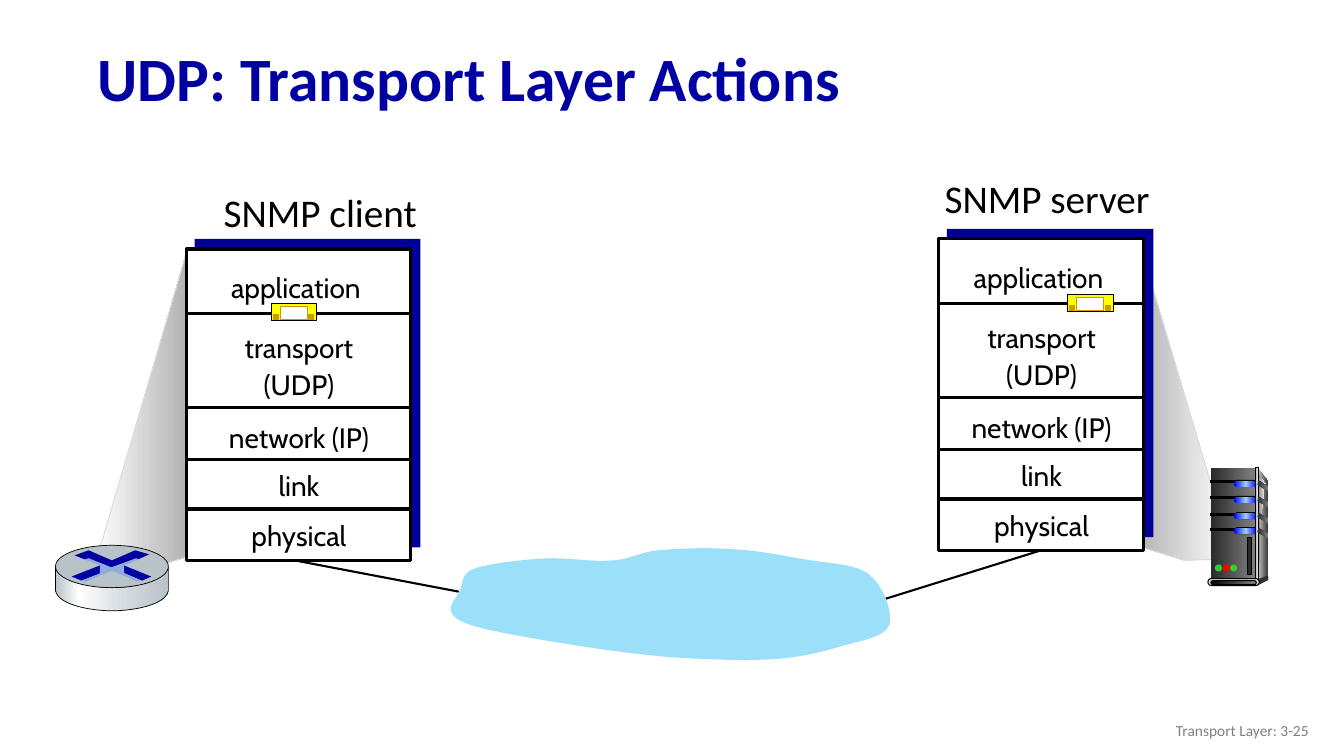
from lxml.etree import SubElement
from pptx import Presentation
from pptx.dml.color import RGBColor
from pptx.enum.shapes import MSO_CONNECTOR, MSO_SHAPE
from pptx.enum.text import MSO_ANCHOR, PP_ALIGN
from pptx.oxml.ns import qn
from pptx.util import Inches, Pt

RECT, ROUND, OVAL = MSO_SHAPE.RECTANGLE, MSO_SHAPE.ROUNDED_RECTANGLE, MSO_SHAPE.OVAL
BLACK, WHITE, NAVY, AMBER = "000000", "FFFFFF", "000099", "CC9900"
BLUE, GREY, SILVER = "0000A3", "808080", "B8C2C9"
DARK_METAL = [(0, "292929"), (100, GREY)]
BLUE_LIGHT = [(0, "0000FF"), (50, "99CCFF"), (100, "0000FF")]
THIN = (BLACK, 0.75)


def color(hex_code):
    return RGBColor.from_string(hex_code)


class Diagram:
    title_font = "Calibri"
    layer_font = "Cabin"

    def __init__(self, slide):
        self.slide = slide
        self.shapes = slide.shapes

    def open_group(self):
        self.shapes = self.slide.shapes.add_group_shape().shapes

    def close_group(self):
        self.shapes = self.slide.shapes

    def paint(self, shape, fill, line=None):
        shape.shadow.inherit = False
        if isinstance(fill, str):
            shape.fill.solid()
            shape.fill.fore_color.rgb = color(fill)
        else:
            shape.fill.gradient()
            shape.fill.gradient_angle = 0
            stops = shape._element.spPr.find(".//" + qn("a:gsLst"))
            for stop in list(stops):
                stops.remove(stop)
            for position, tone in fill:
                stop = SubElement(stops, qn("a:gs"), pos=str(position * 1000))
                SubElement(stop, qn("a:srgbClr"), val=tone)
        if line:
            shape.line.color.rgb = color(line[0])
            shape.line.width = Pt(line[1])
        else:
            shape.line.fill.background()
        return shape

    def shape(self, kind, left, top, width, height, fill, line=None):
        shape = self.shapes.add_shape(kind, Inches(left), Inches(top), Inches(width), Inches(height))
        if kind == ROUND:
            shape.adjustments[0] = 0.5
        return self.paint(shape, fill, line)

    def outline(self, parts, fill, line=None):
        """Closed outline; a part is an (x, y) corner or a six-number cubic curve."""
        points = [(Inches(x), Inches(y)) for part in parts for x, y in zip(part[::2], part[1::2])]
        builder = self.shapes.build_freeform(*points[0])
        builder.add_line_segments(points[1:], close=True)
        shape = builder.convert_to_shape()
        # Redraw the segments with true curves inside the same frame
        track = shape._element.spPr.find(".//" + qn("a:pathLst"))[0]
        for segment in list(track):
            track.remove(segment)
        for index, part in enumerate(parts):
            tag = "a:moveTo" if index == 0 else "a:lnTo" if len(part) == 2 else "a:cubicBezTo"
            segment = SubElement(track, qn(tag))
            for x, y in zip(part[::2], part[1::2]):
                SubElement(segment, qn("a:pt"), x=str(Inches(x) - shape.left), y=str(Inches(y) - shape.top))
        SubElement(track, qn("a:close"))
        return self.paint(shape, fill, line)

    def line(self, x1, y1, x2, y2, width):
        line = self.shapes.add_connector(
            MSO_CONNECTOR.STRAIGHT, Inches(x1), Inches(y1), Inches(x2), Inches(y2))
        line.line.color.rgb = color(BLACK)
        line.line.width = Pt(width)
        SubElement(line._element.spPr, qn("a:effectLst"))
        return line

    def text(self, left, top, width, height, lines, size, tone=BLACK, font=title_font, bold=False,
             align=PP_ALIGN.LEFT, spacing=1.0, anchor=MSO_ANCHOR.TOP, wrap=True):
        frame = self.shapes.add_textbox(
            Inches(left), Inches(top), Inches(width), Inches(height)).text_frame
        frame.word_wrap = wrap
        frame.vertical_anchor = anchor
        for index, words in enumerate(lines):
            paragraph = frame.add_paragraph() if index else frame.paragraphs[0]
            paragraph.alignment = align
            paragraph.line_spacing = spacing
            run = paragraph.add_run()
            run.text = words
            run.font.name, run.font.size, run.font.bold = font, Pt(size), bold
            run.font.color.rgb = color(tone)

    def stack(self, left, top, width):
        """Protocol stack: backing, box, dividers and layer labels."""
        self.open_group()
        self.shape(RECT, left + 0.08, top - 0.1, width + 0.02, 3.06, NAVY)
        box = self.shape(RECT, left, top, width, 3.09, WHITE, (BLACK, 2.25))
        for drop in (0.64, 1.57, 2.09, 2.58):
            self.line(left + 0.01, top + drop, left + width, top + drop, 2.25)
        layers = [(0.08, 0.13, ["application"]), (0.11, 0.73, ["transport", "(UDP)"]),
                  (0.11, 1.62, ["network (IP)"]), (0.11, 2.1, ["link"]), (0.11, 2.59, ["physical"])]
        for indent, drop, words in layers:
            self.text(left + indent, top + drop, width - 0.21, 0.07 + 0.37 * len(words), words, 20,
                      font=self.layer_font, align=PP_ALIGN.CENTER, spacing=1.1)
        self.close_group()
        return box

    def packet(self, left, top):
        self.open_group()
        self.shape(RECT, left, top, 0.45, 0.17, "FFFF00", THIN)
        self.shape(RECT, left + 0.09, top + 0.03, 0.27, 0.13, WHITE, (AMBER, 0.75))
        for offset in (0.02, 0.37):
            self.shape(RECT, left + offset, top + 0.11, 0.05, 0.05, AMBER, (AMBER, 0.75))
        self.close_group()

    def server(self):
        self.open_group()
        # Cabinet
        self.outline([(12.48, 4.65), (12.58, 4.78), (12.57, 5.71), (12.46, 5.76)],
                     [(0, "DDDDDD"), (100, "333333")])
        self.shape(RECT, 12.01, 4.64, 0.44, 1.12, DARK_METAL)
        self.outline([(12.48, 4.71), (12.48, 4.71, 12.5, 4.72, 12.55, 4.8),
                      (12.48, 5.21, 12.49, 5.75, 12.48, 5.73)], [(0, GREY), (100, "F8F8F8")])
        # Drive bays, rail and side slits
        bays = (4.77, 4.93, 5.09, 5.24)
        for y in bays:
            self.shape(RECT, 12.01, y, 0.25, 0.02, BLACK, THIN)
            self.shape(ROUND, 12.24, y - 0.01, 0.24, 0.07, BLACK)
            self.shape(ROUND, 12.24, y, 0.23, 0.06, BLUE_LIGHT)
        self.shape(RECT, 12.45, 4.64, 0.03, 1.12, [(0, "333333"), (50, "DDDDDD"), (100, "333333")], THIN)
        for y in bays:
            self.outline([(12.48, y), (12.49, y, 12.53, y + 0.03, 12.58, y + 0.06), (12.58, y + 0.1),
                          (12.58, y + 0.1, 12.53, y + 0.07, 12.47, y + 0.04)], DARK_METAL)
        # Base, status lights and vent
        self.shape(OVAL, 12.56, 5.71, 0.02, 0.05, "333333")
        self.outline([(12.47, 5.75), (12.47, 5.81), (12.57, 5.76), (12.57, 5.71)], "333333")
        self.shape(ROUND, 11.98, 5.74, 0.51, 0.07, "DDDDDD", THIN)
        self.shape(ROUND, 12.01, 5.76, 0.45, 0.04, [(0, BLACK), (100, GREY)], THIN)
        for x, tone in ((12.05, "33CC33"), (12.13, "FF0000"), (12.2, "33CC33")):
            self.shape(OVAL, x, 5.6, 0.07, 0.07, tone)
        self.shape(RECT, 12.37, 5.33, 0.04, 0.37, "292929", THIN)
        self.close_group()

    def router(self):
        self.open_group()
        # Drum
        self.outline([(1.67, 5.63), (1.67, 5.86), (1.64, 6.01, 1.3, 6.06, 1.11, 6.06),
                      (0.93, 6.06, 0.58, 6.01, 0.55, 5.86), (0.55, 5.63),
                      (0.6, 5.76, 0.92, 5.83, 1.11, 5.83), (1.29, 5.83, 1.62, 5.78, 1.67, 5.63)],
                     [(0, SILVER), (21, WHITE), (60, "D6DCE0"), (100, SILVER)], (BLACK, 0.5))
        self.shape(OVAL, 0.55, 5.41, 1.12, 0.42, SILVER, (BLACK, 0.5))
        # Crossed arrows
        self.outline([(1.34, 5.46), (1.48, 5.5), (1.37, 5.55), (1.35, 5.54), (1.1, 5.63), (0.88, 5.54),
                      (0.84, 5.55), (0.74, 5.51), (0.88, 5.46), (1.11, 5.56)], BLUE)
        self.outline([(1.23, 5.61), (1.5, 5.72), (1.41, 5.76), (1.22, 5.68)], BLUE)
        self.outline([(0.99, 5.61), (0.99, 5.69), (0.81, 5.76), (0.71, 5.72)], "0000A8")
        self.outline([(0.84, 5.55), (0.88, 5.54), (1.11, 5.63), (1.35, 5.54), (1.38, 5.55), (1.23, 5.61),
                      (1.23, 5.69), (1.4, 5.76), (1.36, 5.77), (1.11, 5.66), (0.85, 5.77), (0.81, 5.76),
                      (0.99, 5.69), (0.99, 5.61)], "8FAADC")
        self.close_group()


def main():
    deck = Presentation()
    deck.slide_width, deck.slide_height = Inches(13.33), Inches(7.5)
    diagram = Diagram(deck.slides.add_slide(deck.slide_layouts[6]))

    # Server side
    diagram.outline([(12.23, 5.54), (11.29, 2.37), (11.26, 5.41), (11.75, 5.56)],
                    [(0, "B2B2B2"), (100, WHITE)], ("DDDDDD", 0.75))
    diagram.server()
    diagram.text(9.27, 1.68, 2.26, 0.57, ["SNMP server"], 28, wrap=False)
    diagram.text(2.12, 1.82, 2.14, 0.57, ["SNMP client"], 28, wrap=False)
    server_stack = diagram.stack(9.31, 2.37, 2.03)

    # Title
    diagram.text(0.87, 0.32, 12.14, 0.98, ["UDP: Transport Layer Actions"], 44, BLUE, bold=True,
                 spacing=0.9, anchor=MSO_ANCHOR.MIDDLE)

    # Network cloud and its access links
    server_link = diagram.line(10.33, 5.46, 8.72, 5.96, 1.5)
    server_link.begin_connect(server_stack, 2)
    diagram.line(2.82, 5.54, 4.55, 5.87, 1.5)
    diagram.outline([
        (6.53, 5.46), (6.33, 5.48, 6.26, 5.55, 6.07, 5.56), (5.88, 5.58, 5.64, 5.53, 5.42, 5.54),
        (5.19, 5.55, 4.85, 5.59, 4.71, 5.64), (4.56, 5.69, 4.6, 5.79, 4.56, 5.86),
        (4.52, 5.94, 4.44, 6.02, 4.48, 6.08), (4.51, 6.14, 4.58, 6.18, 4.77, 6.23),
        (4.96, 6.28, 5.32, 6.34, 5.63, 6.39), (5.94, 6.44, 6.3, 6.49, 6.64, 6.52),
        (6.98, 6.54, 7.37, 6.56, 7.67, 6.54), (7.96, 6.52, 8.19, 6.46, 8.38, 6.4),
        (8.58, 6.35, 8.78, 6.31, 8.82, 6.2), (8.86, 6.08, 8.76, 5.81, 8.62, 5.7),
        (8.48, 5.59, 8.2, 5.59, 7.98, 5.55), (7.75, 5.51, 7.51, 5.46, 7.27, 5.45),
        (7.03, 5.43, 6.73, 5.44, 6.53, 5.46)], "9CDFF9")

    # Client side
    diagram.outline([(0.93, 5.65), (1.86, 2.47), (1.84, 5.53), (1.41, 5.66)],
                    [(0, WHITE), (100, "B2B2B2")], ("DDDDDD", 0.75))
    diagram.stack(1.85, 2.47, 2.22)
    diagram.router()

    # Packets and footer
    diagram.packet(2.69, 3.01)
    diagram.packet(10.59, 2.92)
    diagram.text(10.08, 7.05, 3, 0.4, ["Transport Layer: 3-25"], 11, GREY,
                 align=PP_ALIGN.RIGHT, anchor=MSO_ANCHOR.MIDDLE)
    deck.save("out.pptx")


if __name__ == "__main__":
    main()
